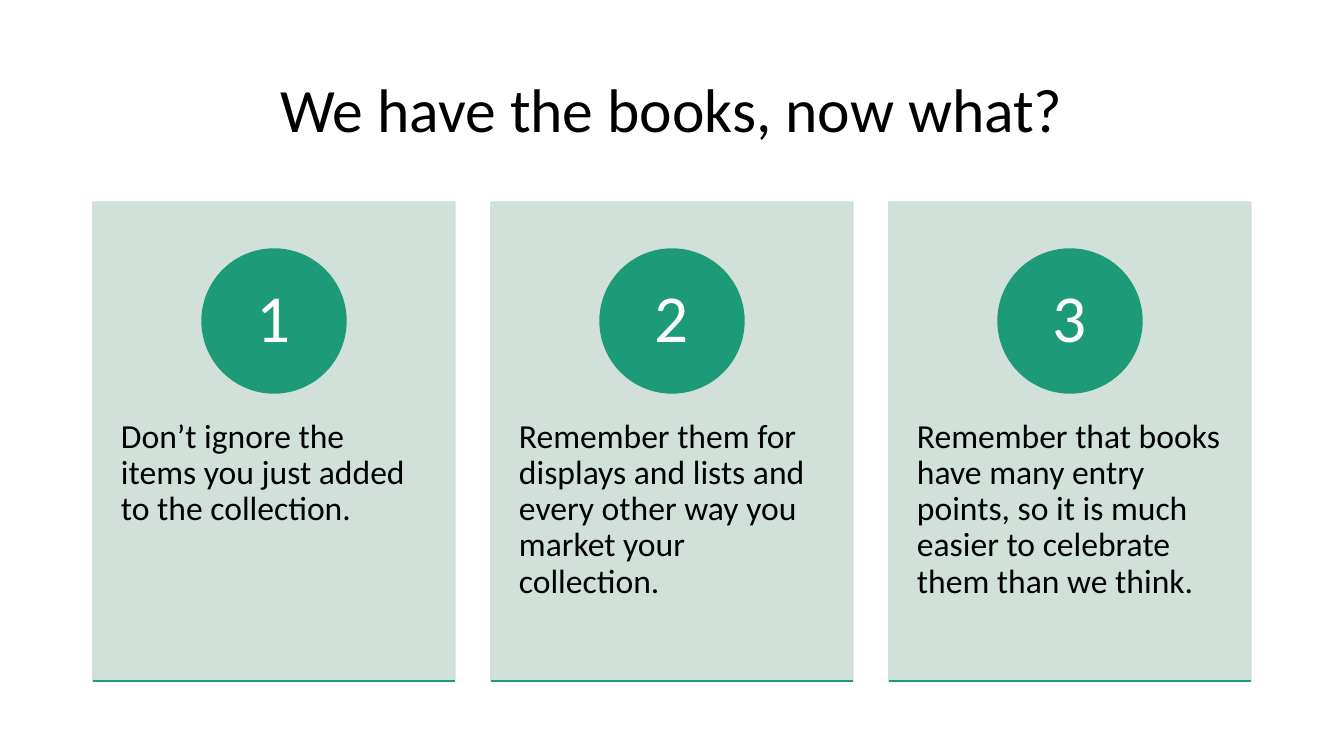
"""Build a slide with three numbered cards on what to do with new books."""
from dataclasses import dataclass

from lxml import etree
from pptx import Presentation
from pptx import util as u
from pptx.dml.color import RGBColor
from pptx.enum import shapes, text
from pptx.oxml.ns import qn

TITLE = "We have the books, now what?"
STEPS = [
    "Don’t ignore the items you just added to the collection.",
    "Remember them for displays and lists and every other way you market your collection.",
    "Remember that books have many entry points, so it is much easier to celebrate them than we think.",
]


@dataclass(frozen=True)
class Theme:
    """Hold the colours, font and type sizes."""
    font: str = "Calibri"
    ink: str = "000000"
    accent: str = "1D9A78"
    on_accent: str = "FFFFFF"
    card: str = "CDDED6"
    card_opacity: int = 90
    title_size: int = 44
    number_size: int = 48
    body_size: int = 24
    line_width: int = 1
    line_spacing: float = 0.9


THEME = Theme()
EMU_PER_PX = 914400 / 100.8
SLIDE_W, SLIDE_H = 1344, 756
LEFT, CARD_W, GAP = 93, 362, 36
CARD_TOP, CARD_H = 202, 479
TITLE_TOP, TITLE_H = 40, 146
CIRCLE_TOP, CIRCLE_D = 249, 144
BODY_TOP, BODY_H = 383, 288
BODY_INSETS = (28, 36)
NUMBER_INSETS = (11, 1)
TITLE_INSETS = (10, 5)


def px(*lengths):
    return [u.Emu(round(length * EMU_PER_PX)) for length in lengths]


def rgb(colour):
    return RGBColor.from_string(colour)


def write(holder, words, size, colour, align, anchor, insets):
    frame = holder.text_frame
    frame.word_wrap = True
    frame.vertical_anchor = anchor
    frame.margin_left, frame.margin_top = px(*insets)
    frame.margin_right, frame.margin_bottom = px(*insets)
    paragraph = frame.paragraphs[0]
    paragraph.text = words
    paragraph.alignment = align
    paragraph.line_spacing = THEME.line_spacing
    paragraph.font.name = THEME.font
    paragraph.font.size = u.Pt(size)
    paragraph.font.color.rgb = rgb(colour)


def add_filled(slide, preset, box, colour, opacity=100):
    shape = slide.shapes.add_shape(preset, *px(*box))
    shape.shadow.inherit = False
    shape.fill.solid()
    shape.fill.fore_color.rgb = rgb(colour)
    shape.line.color.rgb = rgb(colour)
    shape.line.width = u.Pt(THEME.line_width)
    if opacity < 100:
        for colour_tag in shape._element.spPr.iter(qn("a:srgbClr")):
            etree.SubElement(colour_tag, qn("a:alpha"), val=str(opacity * 1000))
    return shape


def add_step(slide, index, words):
    left = LEFT + index * (CARD_W + GAP)
    bottom = CARD_TOP + CARD_H
    add_filled(slide, shapes.MSO_SHAPE.RECTANGLE, (left, CARD_TOP, CARD_W, CARD_H),
               THEME.card, THEME.card_opacity)

    body = slide.shapes.add_textbox(*px(left, BODY_TOP, CARD_W, BODY_H))
    write(body, words, THEME.body_size, THEME.ink,
          text.PP_ALIGN.LEFT, text.MSO_ANCHOR.TOP, BODY_INSETS)

    circle_left = left + (CARD_W - CIRCLE_D) // 2
    circle = add_filled(slide, shapes.MSO_SHAPE.OVAL,
                        (circle_left, CIRCLE_TOP, CIRCLE_D, CIRCLE_D), THEME.accent)
    write(circle, str(index + 1), THEME.number_size, THEME.on_accent,
          text.PP_ALIGN.CENTER, text.MSO_ANCHOR.MIDDLE, NUMBER_INSETS)

    rule = slide.shapes.add_connector(shapes.MSO_CONNECTOR.STRAIGHT,
                                      *px(left, bottom, left + CARD_W, bottom))
    rule.line.color.rgb = rgb(THEME.accent)
    rule.line.width = u.Pt(THEME.line_width)
    etree.SubElement(rule._element.spPr, qn("a:effectLst"))


def main():
    deck = Presentation()
    deck.slide_width, deck.slide_height = px(SLIDE_W, SLIDE_H)
    slide = deck.slides.add_slide(deck.slide_layouts[6])
    title_width = len(STEPS) * (CARD_W + GAP) - GAP
    title = slide.shapes.add_textbox(*px(LEFT, TITLE_TOP, title_width, TITLE_H))
    write(title, TITLE, THEME.title_size, THEME.ink,
          text.PP_ALIGN.CENTER, text.MSO_ANCHOR.MIDDLE, TITLE_INSETS)
    for index, words in enumerate(STEPS):
        add_step(slide, index, words)
    deck.save("out.pptx")


if __name__ == "__main__":
    main()
